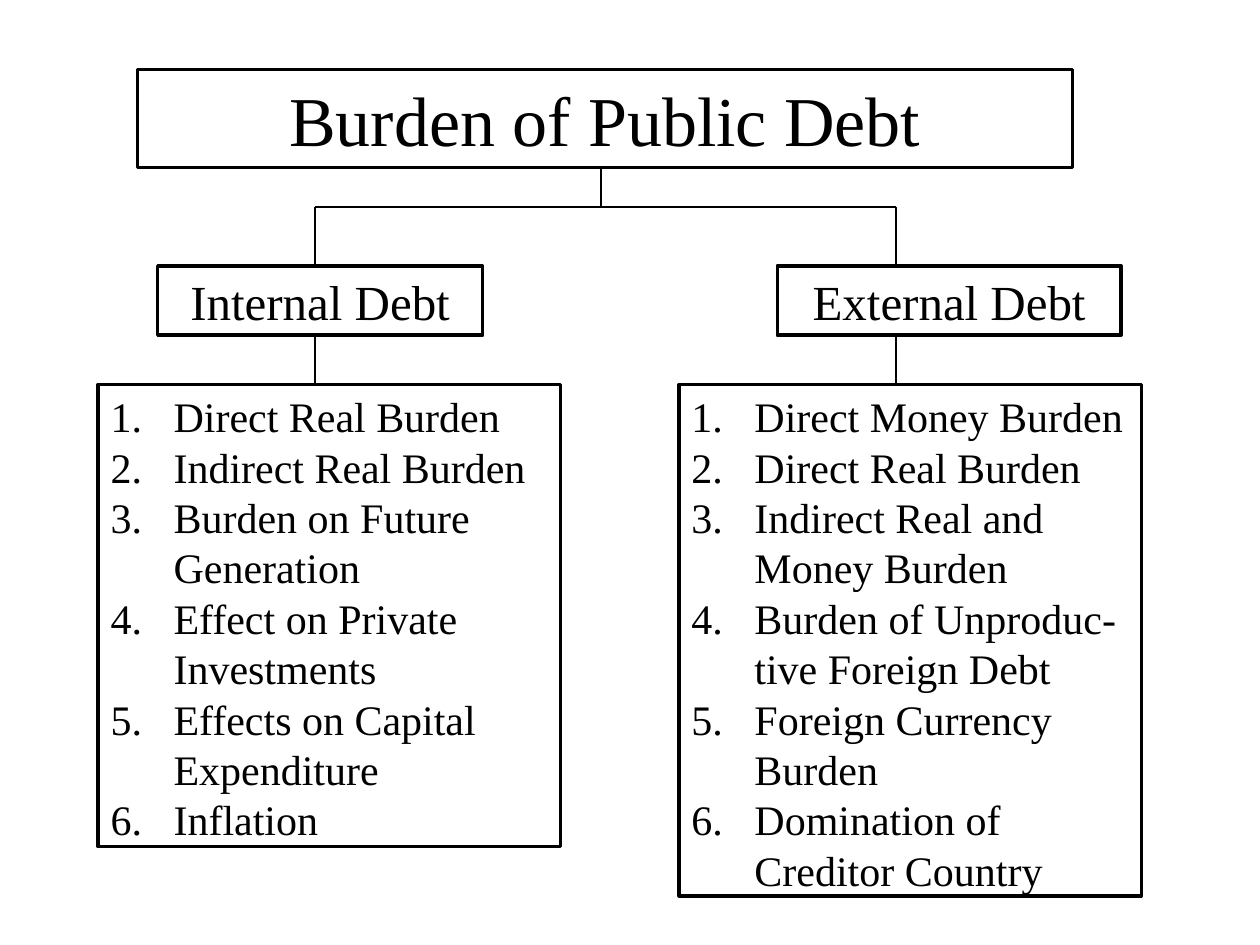
from dataclasses import dataclass

from lxml.etree import SubElement
from pptx import Presentation
from pptx.dml.color import RGBColor
from pptx.enum.shapes import MSO_CONNECTOR, MSO_SHAPE
from pptx.enum.text import MSO_ANCHOR, MSO_AUTO_SIZE, PP_ALIGN
from pptx.oxml.ns import qn
from pptx.util import Cm, Pt


@dataclass(frozen=True)
class Theme:
    font: str = "Times New Roman"
    ink: RGBColor = RGBColor(0, 0, 0)
    paper: RGBColor = RGBColor(255, 255, 255)
    title_size: int = 40
    heading_size: int = 28
    list_size: int = 24
    border_width: float = 2
    connector_width: float = 1.25


@dataclass(frozen=True)
class Branch:
    heading: str
    heading_left: float
    heading_width: float
    stem_x: float
    list_left: float
    list_height: float
    burdens: tuple[str, ...]


THEME = Theme()

# Shared levels, in centimetres
TITLE_LEFT, TITLE_TOP, TITLE_WIDTH, TITLE_HEIGHT = 2.77, 1.4, 18.85, 1.98
TRUNK_X, RAIL_Y = 12.12, 4.17
HEADING_TOP, HEADING_HEIGHT = 5.36, 1.4
LIST_TOP, LIST_WIDTH, LIST_INDENT = 7.75, 9.32, 1.27

BRANCHES = (
    Branch("Internal Debt", 3.18, 6.55, 6.35, 1.98, 9.32, (
        "Direct Real Burden",
        "Indirect Real Burden",
        "Burden on Future Generation",
        "Effect on Private Investments",
        "Effects on Capital Expenditure",
        "Inflation",
    )),
    Branch("External Debt", 15.67, 6.93, 18.06, 13.69, 10.31, (
        "Direct Money Burden",
        "Direct Real Burden",
        "Indirect Real and Money Burden",
        "Burden of Unproduc- tive Foreign Debt",
        "Foreign Currency Burden",
        "Domination of Creditor Country",
    )),
)


def write_text(shape, *lines: str, size: int, align=PP_ALIGN.CENTER,
               anchor=MSO_ANCHOR.MIDDLE, numbered: bool = False) -> None:
    """Write one paragraph per line, optionally as a numbered list."""
    frame = shape.text_frame
    frame.word_wrap = True
    frame.auto_size = MSO_AUTO_SIZE.NONE
    frame.vertical_anchor = anchor
    for index, line in enumerate(lines):
        paragraph = frame.paragraphs[0] if index == 0 else frame.add_paragraph()
        paragraph.alignment = align
        run = paragraph.add_run()
        run.text = line
        run.font.name = THEME.font
        run.font.size = Pt(size)
        run.font.color.rgb = THEME.ink
        if numbered:
            properties = paragraph._p.get_or_add_pPr()
            properties.set("marL", str(Cm(LIST_INDENT)))
            properties.set("indent", str(-Cm(LIST_INDENT)))
            SubElement(properties, qn("a:buFont"), typeface="+mj-lt")
            SubElement(properties, qn("a:buAutoNum"), type="arabicPeriod")


def style_box(shape) -> None:
    shape.fill.solid()
    shape.fill.fore_color.rgb = THEME.paper
    shape.line.color.rgb = THEME.ink
    shape.line.width = Pt(THEME.border_width)


def add_box(slide, left: float, top: float, width: float, height: float):
    shape = slide.shapes.add_shape(
        MSO_SHAPE.RECTANGLE, Cm(left), Cm(top), Cm(width), Cm(height))
    shape.shadow.inherit = False
    style_box(shape)
    return shape


def add_line(slide, x1: float, y1: float, x2: float, y2: float) -> None:
    connector = slide.shapes.add_connector(
        MSO_CONNECTOR.STRAIGHT, Cm(x1), Cm(y1), Cm(x2), Cm(y2))
    connector.line.color.rgb = THEME.ink
    connector.line.width = Pt(THEME.connector_width)
    SubElement(connector._element.spPr, qn("a:effectLst"))


def add_title(slide) -> None:
    title = slide.shapes.title
    title.left, title.top = Cm(TITLE_LEFT), Cm(TITLE_TOP)
    title.width, title.height = Cm(TITLE_WIDTH), Cm(TITLE_HEIGHT)
    style_box(title)
    write_text(title, "Burden of Public Debt", size=THEME.title_size)


def add_branch(slide, branch: Branch) -> None:
    # Heading and its numbered burdens
    heading = add_box(slide, branch.heading_left, HEADING_TOP,
                      branch.heading_width, HEADING_HEIGHT)
    write_text(heading, branch.heading, size=THEME.heading_size)
    burden_box = add_box(slide, branch.list_left, LIST_TOP,
                         LIST_WIDTH, branch.list_height)
    write_text(burden_box, *branch.burdens, size=THEME.list_size,
               align=PP_ALIGN.LEFT, anchor=MSO_ANCHOR.TOP, numbered=True)

    # Rail from the trunk, then the stems above and below the heading
    stem_x = branch.stem_x
    add_line(slide, TRUNK_X, RAIL_Y, stem_x, RAIL_Y)
    add_line(slide, stem_x, RAIL_Y, stem_x, HEADING_TOP)
    add_line(slide, stem_x, HEADING_TOP + HEADING_HEIGHT, stem_x, LIST_TOP)


def main() -> None:
    presentation = Presentation()
    presentation.slide_width, presentation.slide_height = Cm(25.4), Cm(19.05)
    slide = presentation.slides.add_slide(presentation.slide_layouts[5])

    # Title and trunk
    add_title(slide)
    add_line(slide, TRUNK_X, TITLE_TOP + TITLE_HEIGHT, TRUNK_X, RAIL_Y)

    # Two kinds of debt
    for branch in BRANCHES:
        add_branch(slide, branch)

    presentation.save("out.pptx")


if __name__ == "__main__":
    main()
